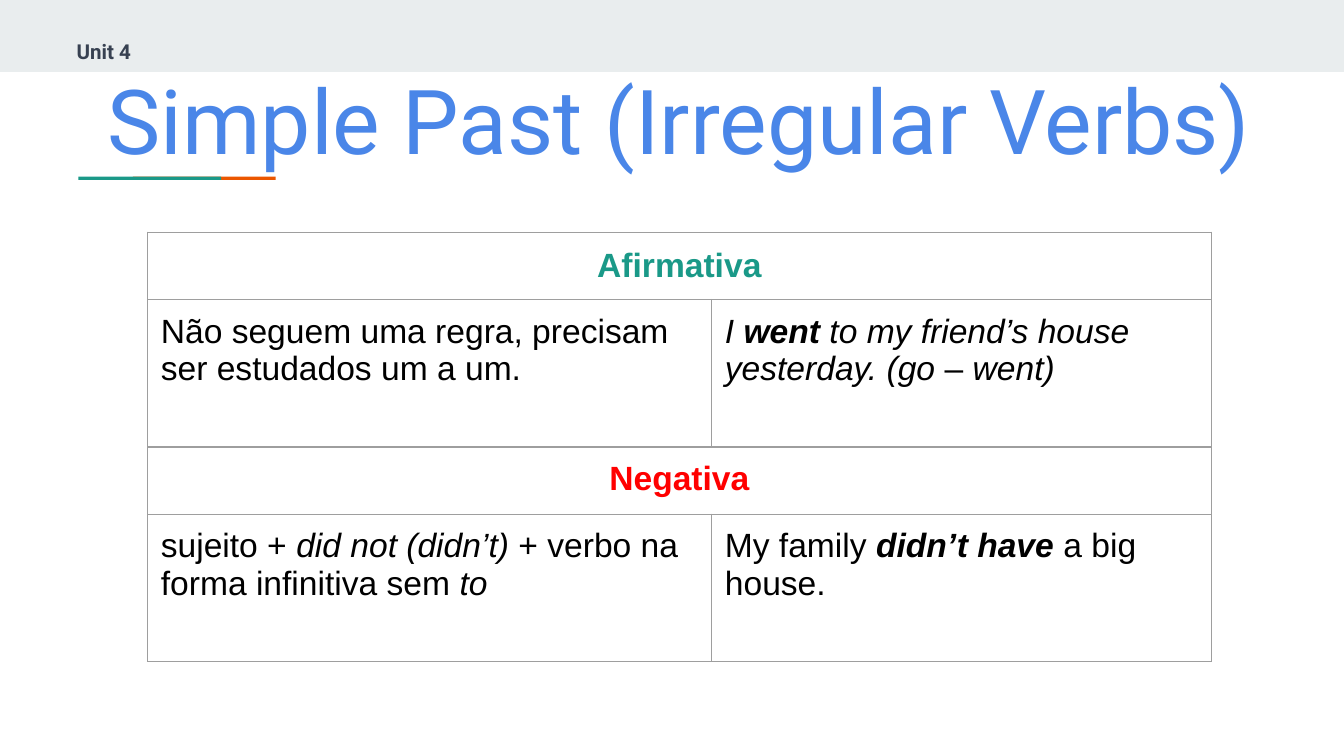
from lxml.etree import SubElement
from pptx import Presentation
from pptx.dml.color import RGBColor
from pptx.enum.shapes import MSO_SHAPE as Shape
from pptx.enum.text import MSO_ANCHOR as Anchor, MSO_AUTO_SIZE as AutoSize, PP_ALIGN as Align
from pptx.oxml.ns import qn
from pptx.util import Cm, Pt

BLACK = RGBColor(0x00, 0x00, 0x00)
RED = RGBColor(0xFF, 0x00, 0x00)
GREEN = RGBColor(0x1A, 0x99, 0x88)
ORANGE = RGBColor(0xEB, 0x56, 0x00)
BLUE = RGBColor(0x4A, 0x86, 0xE8)
SLATE = RGBColor(0x37, 0x41, 0x51)
PALE = RGBColor(0xE9, 0xED, 0xEE)
GRAY = RGBColor(0x9E, 0x9E, 0x9E)

# Content: each cell is a list of paragraphs, each paragraph a list of (text, style)
UNIT = "Unit 4"
TITLE = "Simple Past (Irregular Verbs)"
SECTIONS = [
    ("Afirmativa", GREEN, Anchor.MIDDLE, [
        [[("Não seguem uma regra, precisam ser estudados um a um.", "")]],
        [[("I ", "i"), ("went ", "bi"), ("to my friend’s house", "i")],
         [("yesterday. (go ", "i"), ("– ", ""), ("went)", "i")]],
    ]),
    ("Negativa", RED, Anchor.TOP, [
        [[("sujeito + ", ""), ("did not (didn’t)", "i"),
          (" + verbo na forma infinitiva sem ", ""), ("to", "i")]],
        [[("My family ", ""), ("didn’t have", "bi"), (" a big house.", "")]],
    ]),
]

# Layout in centimetres
WIDTH, HEIGHT = 25.4, 14.29
BARS = [  # left, top, width, height, colour; the green bar overlaps the orange one
    (0, 0, WIDTH, 1.36, PALE),
    (2.51, 3.34, 2.7, 0.06, ORANGE),
    (1.48, 3.34, 2.7, 0.06, GREEN),
]
TABLE_LEFT, TABLE_TOP = 2.79, 4.39
COLUMNS = (10.66, 9.44)
HEADING_ROW, BODY_ROW = 1.27, 2.79
INSET = 0.25


def add_span(para, text, font, size, color, style=""):
    span = para.add_run()
    span.text = text
    span.font.name = font
    span.font.size = Pt(size)
    span.font.color.rgb = color
    span.font.bold = "b" in style
    span.font.italic = "i" in style


def set_insets(target, inset):
    target.margin_left = target.margin_right = Cm(inset)
    target.margin_top = target.margin_bottom = Cm(inset)


def fill_cell(cell, paragraphs, color=BLACK, align=Align.LEFT, anchor=Anchor.TOP):
    set_insets(cell, INSET)
    cell.vertical_anchor = anchor
    for index, spans in enumerate(paragraphs):
        frame = cell.text_frame
        para = frame.add_paragraph() if index else frame.paragraphs[0]
        para.alignment = align
        for text, style in spans:
            add_span(para, text, "Arial", 18, color, style)


def outline_cell(cell):
    properties = cell._tc.get_or_add_tcPr()
    for side in ("lnL", "lnR", "lnT", "lnB"):
        line = SubElement(properties, qn(f"a:{side}"), w=str(Pt(0.75)))
        paint = SubElement(line, qn("a:solidFill"))
        SubElement(paint, qn("a:srgbClr"), val=str(GRAY))
    cell.fill.background()


deck = Presentation()
deck.slide_width, deck.slide_height = Cm(WIDTH), Cm(HEIGHT)
page = deck.slides.add_slide(deck.slide_layouts[5])

# Header band and accent line
for left, top, width, height, color in BARS:
    bar = page.shapes.add_shape(Shape.RECTANGLE, Cm(left), Cm(top), Cm(width), Cm(height))
    bar.shadow.inherit = False
    bar.fill.solid()
    bar.fill.fore_color.rgb = color
    bar.line.fill.background()

# Title, brought in front of the band
title = page.shapes.title
page.shapes._spTree.append(title._element)
title.left, title.top, title.width, title.height = Cm(1.69), Cm(0.95), Cm(22.3), Cm(2.57)
frame = title.text_frame
frame.word_wrap = True
frame.auto_size = AutoSize.NONE
frame.vertical_anchor = Anchor.MIDDLE
set_insets(frame, INSET)
frame.paragraphs[0].alignment = Align.CENTER
add_span(frame.paragraphs[0], TITLE, "Roboto", 48, BLUE)

# Table: a merged heading row above each pair of cells
table_height = len(SECTIONS) * (HEADING_ROW + BODY_ROW)
table = page.shapes.add_table(2 * len(SECTIONS), len(COLUMNS), Cm(TABLE_LEFT), Cm(TABLE_TOP),
                              Cm(sum(COLUMNS)), Cm(table_height)).table
table.first_row = table.horz_banding = False
for column, width in zip(table.columns, COLUMNS):
    column.width = Cm(width)
for index, (heading, color, anchor, bodies) in enumerate(SECTIONS):
    row = 2 * index
    table.rows[row].height = Cm(HEADING_ROW)
    table.rows[row + 1].height = Cm(BODY_ROW)
    table.cell(row, 0).merge(table.cell(row, len(COLUMNS) - 1))
    fill_cell(table.cell(row, 0), [[(heading, "b")]], color, Align.CENTER, anchor)
    for column, paragraphs in enumerate(bodies):
        fill_cell(table.cell(row + 1, column), paragraphs)
for cell in table.iter_cells():
    outline_cell(cell)

# Unit label
label = page.shapes.add_textbox(Cm(1.2), Cm(0.61), Cm(1.55), Cm(0.74))
label.text_frame.word_wrap = False
label.text_frame.auto_size = AutoSize.SHAPE_TO_FIT_TEXT
add_span(label.text_frame.paragraphs[0], UNIT, "Roboto", 11, SLATE, "b")

deck.save("out.pptx")
